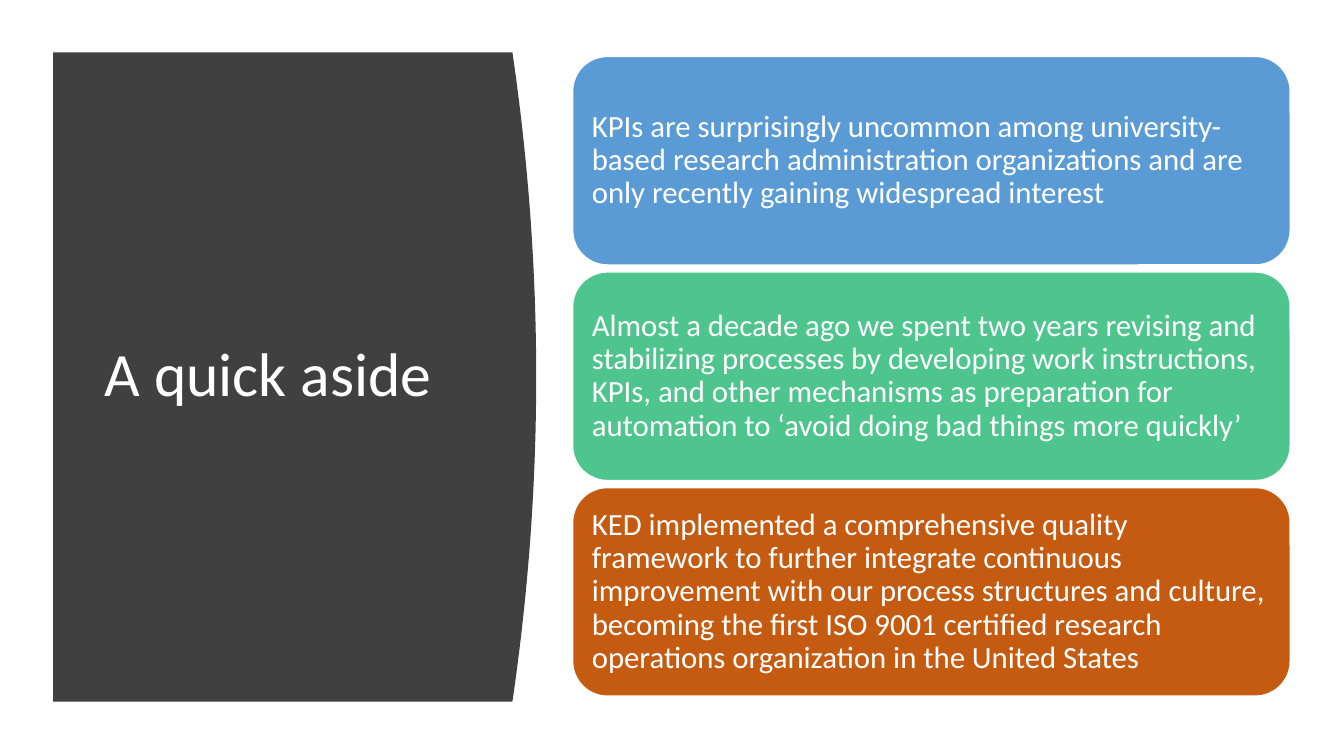
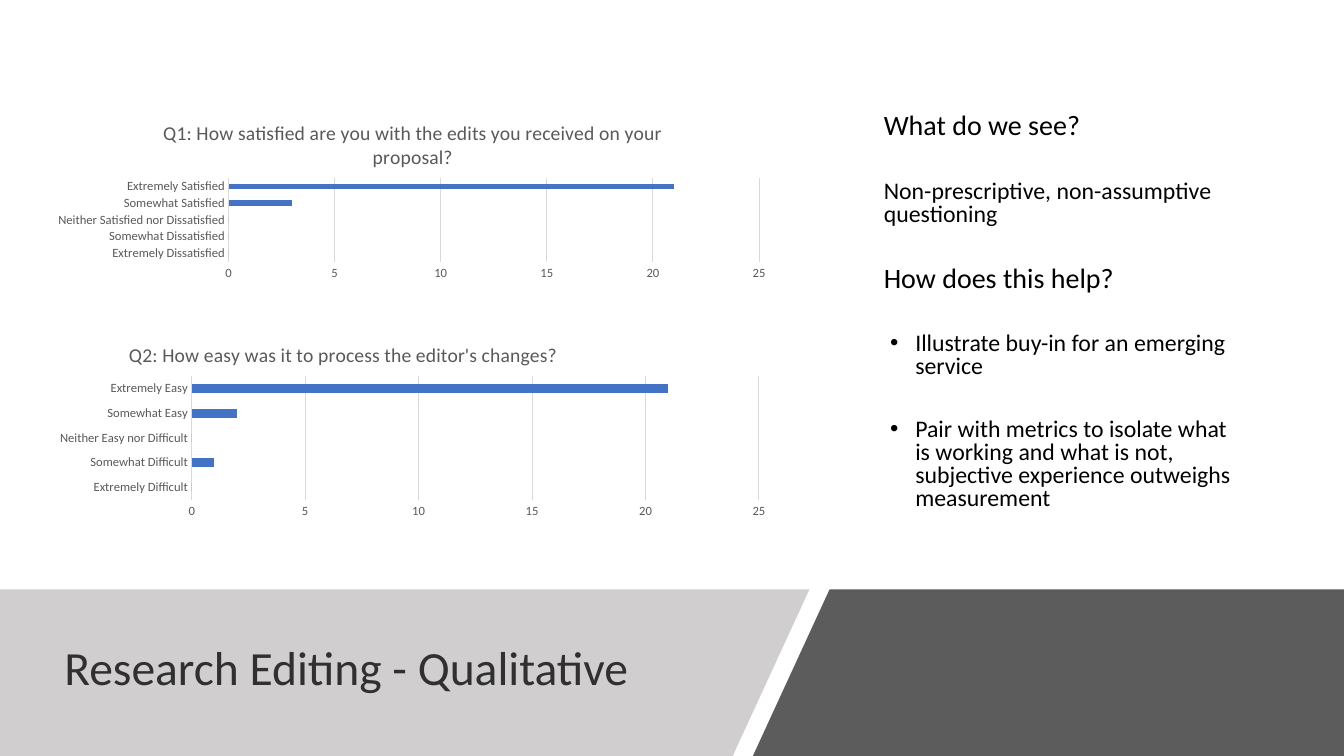
from lxml.etree import SubElement
from pptx import Presentation
from pptx.chart.data import CategoryChartData
from pptx.dml.color import RGBColor
from pptx.enum.chart import XL_CHART_TYPE as ChartType, XL_TICK_MARK as TickMark
from pptx.enum.shapes import MSO_SHAPE as Shape
from pptx.enum.text import MSO_ANCHOR as Anchor, PP_ALIGN as Align
from pptx.oxml import parse_xml
from pptx.oxml.ns import nsdecls, qn
from pptx.util import Pt

FONT = "Calibri"
WHITE = RGBColor(0xFF, 0xFF, 0xFF)
BLACK = RGBColor(0x00, 0x00, 0x00)
CHARCOAL = RGBColor(0x40, 0x40, 0x40)
TITLE_GRAY = RGBColor(0x30, 0x30, 0x30)
BAND_GRAY = RGBColor(0xD0, 0xCE, 0xCE)
LABEL_GRAY = RGBColor(0x59, 0x59, 0x59)
GRID_GRAY = RGBColor(0xD9, 0xD9, 0xD9)
BAR_BLUE = RGBColor(0x44, 0x72, 0xC4)
CARD_BLUE = RGBColor(0x5B, 0x9B, 0xD5)
CARD_GREEN = RGBColor(0x4D, 0xC5, 0x8D)
CARD_ORANGE = RGBColor(0xC5, 0x5A, 0x11)

SLIDE_WIDTH, SLIDE_HEIGHT = 960, 540
BAND_TOP = 421
CARD_TOP, CARD_HEIGHT, CARD_PITCH = 40.3, 149, 154

CARDS = [
    ("KPIs are surprisingly uncommon among university-based research "
     "administration organizations and are only recently gaining widespread "
     "interest", CARD_BLUE),
    ("Almost a decade ago we spent two years revising and stabilizing "
     "processes by developing work instructions, KPIs, and other mechanisms "
     "as preparation for automation to ‘avoid doing bad things more quickly’",
     CARD_GREEN),
    ("KED implemented a comprehensive quality framework to further integrate "
     "continuous improvement with our process structures and culture, "
     "becoming the first ISO 9001 certified research operations organization "
     "in the United States", CARD_ORANGE),
]

# text, size, bulleted
NOTES = [
    ("What do we see?", 20, False),
    ("Non-prescriptive, non-assumptive questioning", 17, False),
    ("How does this help?", 20, False),
    ("Illustrate buy-in for an emerging service", 17, True),
    ("Pair with metrics to isolate what is working and what is not, "
     "subjective experience outweighs measurement", 17, True),
]

SATISFACTION = {
    "Extremely Dissatisfied": 0,
    "Somewhat Dissatisfied": 0,
    "Neither Satisfied nor Dissatisfied": 0,
    "Somewhat Satisfied": 3,
    "Extremely Satisfied": 21,
}
EASE = {
    "Extremely Difficult": 0,
    "Somewhat Difficult": 1,
    "Neither Easy nor Difficult": 0,
    "Somewhat Easy": 2,
    "Extremely Easy": 21,
}


def style_font(font, size, color):
    font.name = FONT
    font.size = Pt(size)
    font.color.rgb = color
    font.bold = False


def write_paragraph(paragraph, text, size, color, line_spacing=0.9):
    paragraph.text = text
    paragraph.alignment = Align.LEFT
    paragraph.line_spacing = line_spacing
    style_font(paragraph.runs[0].font, size, color)


def add_text_frame(slide, left, top, width, height):
    box = slide.shapes.add_textbox(Pt(left), Pt(top), Pt(width), Pt(height))
    frame = box.text_frame
    frame.word_wrap = True
    frame.vertical_anchor = Anchor.MIDDLE
    return frame


def add_title(slide, text, box, size, color):
    frame = add_text_frame(slide, *box)
    write_paragraph(frame.paragraphs[0], text, size, color)


def add_polygon(slide, points, color, opacity=100):
    vertices = [(Pt(x), Pt(y)) for x, y in points]
    builder = slide.shapes.build_freeform(*vertices[0], scale=1.0)
    builder.add_line_segments(vertices[1:], close=True)
    shape = builder.convert_to_shape()
    shape.shadow.inherit = False
    shape.fill.solid()
    shape.fill.fore_color.rgb = color
    shape.line.fill.background()
    if opacity < 100:
        color_element = shape.fill._xPr.find(qn("a:solidFill"))[0]
        SubElement(color_element, qn("a:alpha")).set("val", str(opacity * 1000))


def add_curved_panel(slide):
    """Draw the title panel, its right side bulging as a parabola."""
    left, side, bulge, top, bottom = 38, 366, 17, 37.4, 501.2
    steps = 48
    curve = []
    for step in range(steps + 1):
        offset = 2 * step / steps - 1
        curve.append((side + bulge * (1 - offset ** 2),
                      top + (bottom - top) * step / steps))
    add_polygon(slide, [(left, top), *curve, (left, bottom)], CHARCOAL)


def add_card(slide, top, text, color):
    card = slide.shapes.add_shape(
        Shape.ROUNDED_RECTANGLE, Pt(409), Pt(top), Pt(512.6), Pt(CARD_HEIGHT))
    card.shadow.inherit = False
    card.fill.solid()
    card.fill.fore_color.rgb = color
    card.line.color.rgb = WHITE
    card.line.width = Pt(1)
    frame = card.text_frame
    frame.word_wrap = True
    frame.vertical_anchor = Anchor.MIDDLE
    frame.margin_left = frame.margin_right = Pt(6.5)
    frame.margin_top = frame.margin_bottom = Pt(6.5)
    write_paragraph(frame.paragraphs[0], text, 22, WHITE)


def add_bullet(paragraph):
    properties = paragraph._p.get_or_add_pPr()
    properties.set("marL", str(Pt(22.5)))
    properties.set("indent", str(-Pt(18)))
    SubElement(properties, qn("a:buFont")).set("typeface", "Arial")
    SubElement(properties, qn("a:buChar")).set("char", "•")


def add_notes(slide):
    frame = add_text_frame(slide, 624.2, 64.8, 270, 316.8)
    for index, (text, size, bulleted) in enumerate(NOTES):
        paragraph = frame.add_paragraph() if index else frame.paragraphs[0]
        write_paragraph(paragraph, text, size, BLACK, line_spacing=0.8)
        if index:
            paragraph.space_before = Pt(28.6)
        if bulleted:
            add_bullet(paragraph)


def set_layout(parent, index, fractions):
    """Place a chart part by x, y and, for the plot area, width and height."""
    for existing in parent.findall(qn("c:layout")):
        parent.remove(existing)
    layout = parse_xml(f"<c:layout {nsdecls('c')}><c:manualLayout/></c:layout>")
    settings = [("xMode", "edge"), ("yMode", "edge"), *zip("xywh", fractions)]
    if len(fractions) == 4:
        settings.insert(0, ("layoutTarget", "inner"))
    for name, value in settings:
        SubElement(layout[0], qn(f"c:{name}")).set("val", str(value))
    parent.insert(index, layout)


def style_axes(chart):
    category_axis, value_axis = chart.category_axis, chart.value_axis
    for axis in (category_axis, value_axis):
        axis.major_tick_mark = axis.minor_tick_mark = TickMark.NONE
        style_font(axis.tick_labels.font, 9, LABEL_GRAY)
    value_axis.minimum_scale = 0
    value_axis.maximum_scale = 25
    value_axis.major_unit = 5
    value_axis.format.line.fill.background()
    for line in (category_axis.format.line,
                 value_axis.major_gridlines.format.line):
        line.color.rgb = GRID_GRAY
        line.width = Pt(0.75)


def add_survey_chart(slide, title, answers, top, height, plot, title_at=None):
    data = CategoryChartData()
    data.categories = list(answers)
    data.add_series(title, list(answers.values()))
    chart = slide.shapes.add_chart(
        ChartType.BAR_CLUSTERED, Pt(31.7), Pt(top), Pt(526.3), Pt(height),
        data).chart
    style_font(chart.font, 10, BLACK)
    chart.has_legend = False
    chart.has_title = True
    chart_title = chart.chart_title
    chart_title.include_in_layout = False
    chart_title.text_frame.text = title
    style_font(chart_title.text_frame.paragraphs[0].runs[0].font, 14, LABEL_GRAY)
    if title_at:
        set_layout(chart_title._element, 1, title_at)
    set_layout(chart._chartSpace.chart.plotArea, 0, plot)
    style_axes(chart)
    bars = chart.plots[0]
    bars.gap_width = 182
    bars.vary_by_categories = False
    fill = bars.series[0].format.fill
    fill.solid()
    fill.fore_color.rgb = BAR_BLUE


def add_footer_bands(slide):
    add_polygon(slide, [(592.6, BAND_TOP), (SLIDE_WIDTH, BAND_TOP),
                        (SLIDE_WIDTH, SLIDE_HEIGHT), (537.8, SLIDE_HEIGHT)],
                CHARCOAL, opacity=85)
    add_polygon(slide, [(0, BAND_TOP), (578.2, BAND_TOP),
                        (523.4, SLIDE_HEIGHT), (0, SLIDE_HEIGHT)], BAND_GRAY)


def build_aside(slide):
    add_curved_panel(slide)
    add_title(slide, "A quick aside", (67.7, 80, 269.3, 377.3), 44, WHITE)
    for index, (text, color) in enumerate(CARDS):
        add_card(slide, CARD_TOP + index * CARD_PITCH, text, color)


def build_survey(slide):
    add_footer_bands(slide)
    add_title(slide, "Research Editing - Qualitative",
              (38.9, 435.6, 484.6, 86.4), 34, TITLE_GRAY)
    add_notes(slide)
    add_survey_chart(
        slide,
        "Q1: How satisfied are you with the edits you received on your proposal?",
        SATISFACTION, 76.3, 127.4, plot=(0.25, 0.4, 0.72, 0.47))
    add_survey_chart(
        slide, "Q2: How easy was it to process the editor's changes?",
        EASE, 234, 139.7, plot=(0.2, 0.25, 0.77, 0.63), title_at=(0.11, 0.05))


def main():
    presentation = Presentation()
    presentation.slide_width = Pt(SLIDE_WIDTH)
    presentation.slide_height = Pt(SLIDE_HEIGHT)
    blank = presentation.slide_layouts[6]
    for build in (build_aside, build_survey):
        build(presentation.slides.add_slide(blank))
    presentation.save("out.pptx")


if __name__ == "__main__":
    main()
